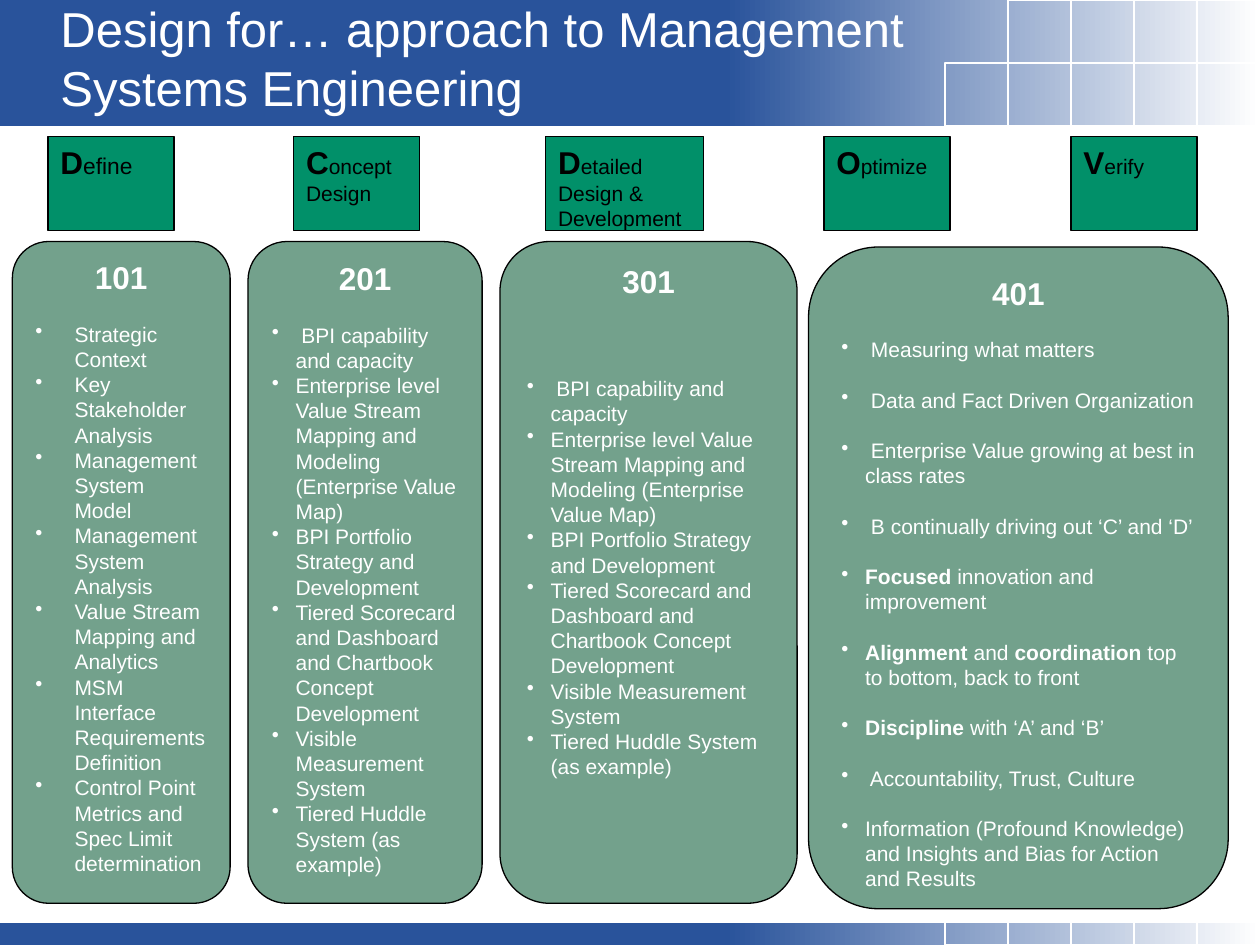
import lxml.etree
import pptx
import pptx.dml.color
import pptx.enum.shapes
import pptx.enum.text
import pptx.oxml.ns
import pptx.util

Cm = pptx.util.Cm
Pt = pptx.util.Pt
RGBColor = pptx.dml.color.RGBColor
Preset = pptx.enum.shapes.MSO_SHAPE
Align = pptx.enum.text.PP_ALIGN
Anchor = pptx.enum.text.MSO_ANCHOR

BLUE = RGBColor(0x29, 0x53, 0x9B)
WHITE = RGBColor(0xFF, 0xFF, 0xFF)
BLACK = RGBColor(0, 0, 0)
GREEN = RGBColor(0x01, 0x90, 0x69)
SAGE = RGBColor(0x73, 0xA1, 0x8C)

WIDTH, HEIGHT = 25.4, 19.05
TILE = 1.27
FADE_LEFT = 14.61
PHASE_TOP, PHASE_HEIGHT = 2.75, 1.9
COURSE_HEIGHT = 13.34
LINE_GAP = 14.4

TITLE = {"name": "Arial", "size": Pt(28)}
INITIAL = {"name": "Arial", "size": Pt(18), "bold": True}
BODY = {"name": "Arial", "size": Pt(12), "bold": False}
STRONG = {**BODY, "bold": True}

PHASES = [
    (0.97, 2.54, "D", ["efine"], 13),
    (5.92, 2.54, "C", ["oncept Design"], 12),
    (11, 3.18, "D", ["etailed", "Design & Development"], 12),
    (16.61, 2.54, "O", ["ptimize"], 12),
    (21.59, 2.54, "V", ["erify"], 12),
]

FOUNDATIONS = [
    "Strategic Context",
    "Key Stakeholder Analysis",
    "Management System Model",
    "Management System Analysis",
    "Value Stream Mapping and Analytics",
    "MSM Interface Requirements Definition",
    "Control Point Metrics and Spec Limit determination",
]
CAPABILITIES = [
    " BPI capability and capacity",
    "Enterprise level Value Stream Mapping and Modeling (Enterprise Value Map)",
    "BPI Portfolio Strategy and Development",
    "Tiered Scorecard and Dashboard and Chartbook Concept Development",
    "Visible Measurement System",
    "Tiered Huddle System (as example)",
]
OUTCOMES = [
    " Measuring what matters",
    " Data and Fact Driven Organization",
    " Enterprise Value growing at best in class rates",
    " B continually driving out ‘C’ and ‘D’",
    "*Focused* innovation and improvement",
    "*Alignment *and *coordination* top to bottom, back to front",
    "*Discipline* with ‘A’ and ‘B’",
    " Accountability, Trust, Culture",
    "Information (Profound Knowledge) and Insights and Bias for Action and Results",
]
COURSES = [
    ("101", 0.25, 4.87, 4.39, 0.79, LINE_GAP, 0, FOUNDATIONS),
    ("201", 5, 4.87, 4.72, 0.48, LINE_GAP, 0, CAPABILITIES),
    ("301", 10.08, 4.87, 5.99, 0.48, 3 * LINE_GAP, 0, CAPABILITIES),
    ("401", 16.3, 4.98, 8.46, 0.48, LINE_GAP, LINE_GAP, OUTCOMES),
]


def add_run(paragraph, text, color, values):
    run = paragraph.add_run()
    run.text = text
    for attribute, value in values.items():
        setattr(run.font, attribute, value)
    run.font.color.rgb = color


def add_block(slide, preset, left, top, width, height, fill=None, outline=None):
    block = slide.shapes.add_shape(preset, Cm(left), Cm(top), Cm(width), Cm(height))
    block.shadow.inherit = False
    if fill is None:
        block.fill.background()
    else:
        block.fill.solid()
        block.fill.fore_color.rgb = fill
    if outline is None:
        block.line.fill.background()
    else:
        block.line.color.rgb = outline
        block.line.width = Pt(0.75)
    block.text_frame.word_wrap = True
    block.text_frame.vertical_anchor = Anchor.TOP
    return block


def add_band(slide, top, height):
    add_block(slide, Preset.RECTANGLE, 0, top, WIDTH, height, BLUE)
    fade = add_block(slide, Preset.RECTANGLE, FADE_LEFT, top, WIDTH - FADE_LEFT, height)
    fade.fill.gradient()
    fade.fill.gradient_angle = 0
    for stop, color, position in zip(fade.fill.gradient_stops, (BLUE, WHITE), (0, 1)):
        stop.color.rgb = color
        stop.position = position


def add_tiles(slide, top, count):
    for place in range(count, 0, -1):
        add_block(slide, Preset.RECTANGLE, WIDTH - place * TILE, top, TILE, TILE, outline=WHITE)


def add_title(slide, text):
    title = slide.shapes.add_textbox(Cm(0.97), Cm(0.2), Cm(17.98), Cm(1.9))
    title.text_frame.word_wrap = True
    title.text_frame.vertical_anchor = Anchor.MIDDLE
    add_run(title.text_frame.paragraphs[0], text, WHITE, TITLE)


def add_phase(slide, left, width, initial, lines, size):
    phase = add_block(slide, Preset.RECTANGLE, left, PHASE_TOP, width, PHASE_HEIGHT, GREEN, BLACK)
    paragraph = phase.text_frame.paragraphs[0]
    add_run(paragraph, initial, BLACK, INITIAL)
    for index, line in enumerate(lines):
        if index:
            paragraph = phase.text_frame.add_paragraph()
        paragraph.alignment = Align.LEFT
        add_run(paragraph, line, BLACK, {**BODY, "size": Pt(size)})


def add_bullet(frame, text, indent, space):
    paragraph = frame.add_paragraph()
    properties = paragraph._p.get_or_add_pPr()
    properties.set("marL", str(Cm(indent)))
    properties.set("indent", str(-Cm(indent)))
    mark = lxml.etree.SubElement(properties, pptx.oxml.ns.qn("a:buChar"))
    mark.set("char", "•")
    paragraph.alignment = Align.LEFT
    paragraph.space_before = Pt(space)
    for index, part in enumerate(text.split("*")):
        if part:
            add_run(paragraph, part, WHITE, STRONG if index % 2 else BODY)


def add_course(slide, number, left, top, width, indent, lead, gap, topics):
    course = add_block(slide, Preset.ROUNDED_RECTANGLE, left, top, width, COURSE_HEIGHT, SAGE, BLACK)
    heading = course.text_frame.paragraphs[0]
    heading.alignment = Align.CENTER
    add_run(heading, number, WHITE, INITIAL)
    for index, topic in enumerate(topics):
        add_bullet(course.text_frame, topic, indent, gap if index else lead)


def main():
    deck = pptx.Presentation()
    deck.slide_width, deck.slide_height = Cm(WIDTH), Cm(HEIGHT)
    slide = deck.slides.add_slide(deck.slide_layouts[6])
    add_band(slide, 18.61, 0.44)
    add_band(slide, 0, 2 * TILE)
    for top, count in ((0, 4), (TILE, 5), (HEIGHT - TILE, 5)):
        add_tiles(slide, top, count)
    add_title(slide, "Design for… approach to Management Systems Engineering")
    for phase in PHASES:
        add_phase(slide, *phase)
    for course in COURSES:
        add_course(slide, *course)
    deck.save("out.pptx")


if __name__ == "__main__":
    main()
